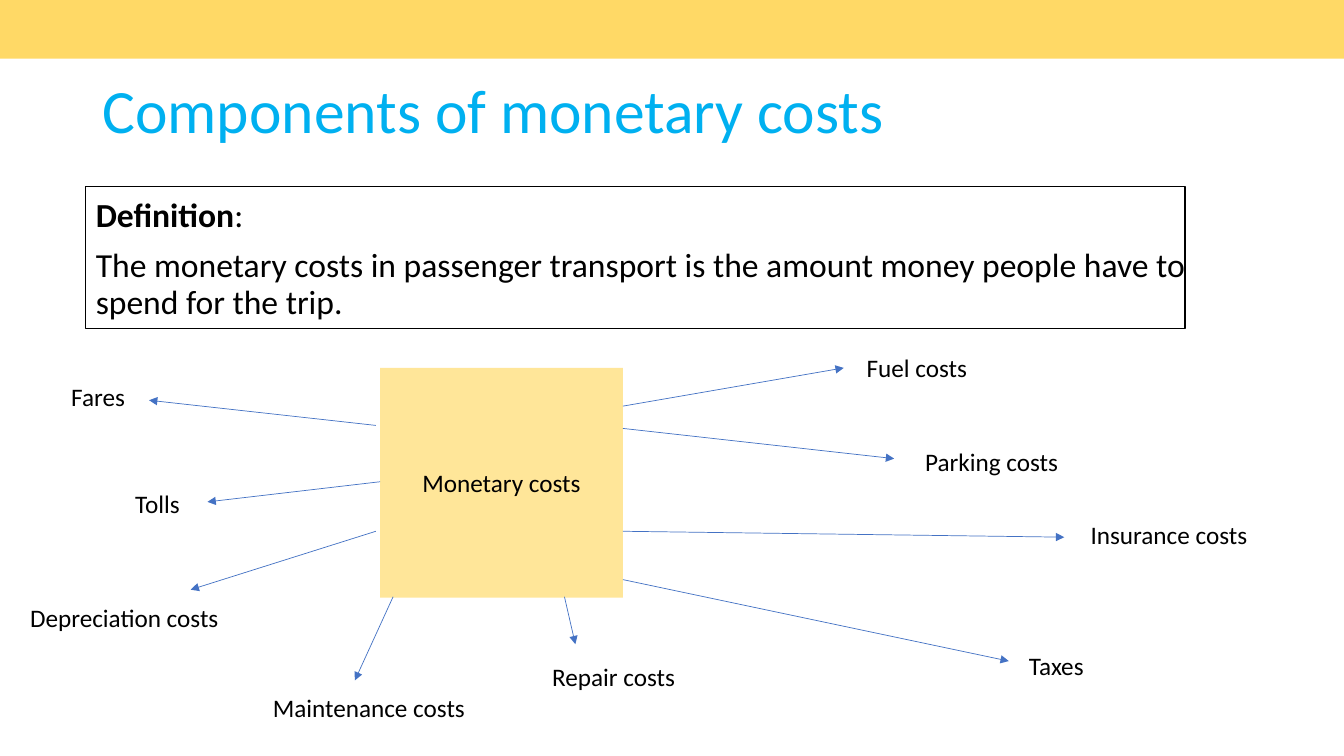
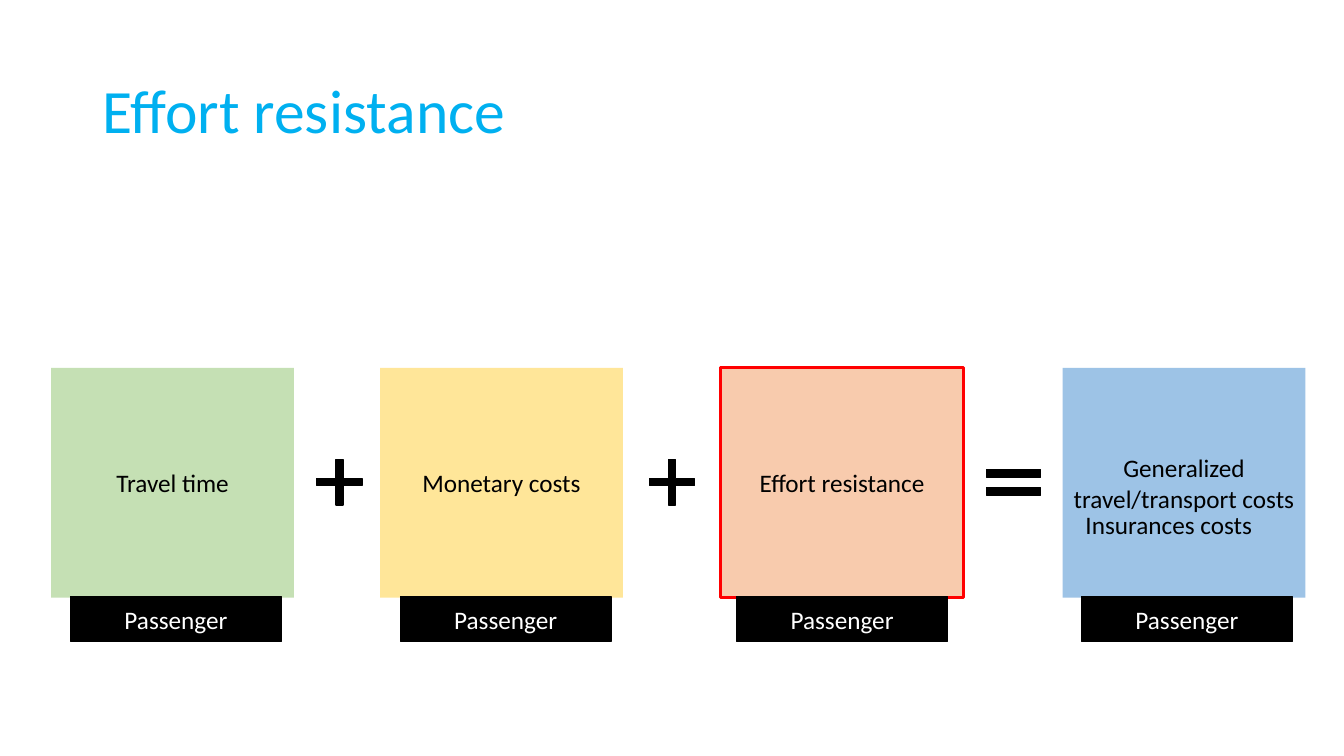
"""Build two slides on the monetary costs and effort resistance of passenger transport."""
import pptx
import pptx.dml.color
import pptx.enum.shapes
import pptx.enum.text
import pptx.oxml
import pptx.oxml.ns
import pptx.util

RGBColor = pptx.dml.color.RGBColor
SHAPES = pptx.enum.shapes.MSO_SHAPE
ALIGN = pptx.enum.text.PP_ALIGN
ANCHOR = pptx.enum.text.MSO_ANCHOR
FIT = pptx.enum.text.MSO_AUTO_SIZE

BLACK = RGBColor(0x00, 0x00, 0x00)
WHITE = RGBColor(0xFF, 0xFF, 0xFF)
TITLE_BLUE = RGBColor(0x00, 0xB0, 0xF0)
ARROW_BLUE = RGBColor(0x44, 0x72, 0xC4)
BAND_YELLOW = RGBColor(0xFF, 0xD9, 0x66)
GREEN = RGBColor(0xC5, 0xE0, 0xB4)
YELLOW = RGBColor(0xFF, 0xE6, 0x99)
ORANGE = RGBColor(0xF8, 0xCB, 0xAD)
BLUE = RGBColor(0x9D, 0xC3, 0xE6)
RED = RGBColor(0xFF, 0x00, 0x00)

FONT = "Calibri"
COLUMNS, ROWS = 32, 18
BOX_TOP, BOX_WIDTH, BOX_HEIGHT = 8.76, 5.78, 5.47
MONETARY_LEFT = 9.05
LABEL_HEIGHT = 0.96

COST_ITEMS = [
    ("Fuel costs", (20.4, 8.28, 2.9), (14.83, 9.67), (20.09, 8.76)),
    ("Parking costs", (21.79, 10.51, 3.67), (14.83, 10.2), (21.29, 10.92)),
    ("Fares", (1.46, 8.95, 1.78), (8.95, 10.13), (3.55, 9.53)),
    ("Tolls", (2.98, 11.5, 1.56), (9.05, 11.47), (4.94, 11.95)),
    ("Depreciation costs", (0.48, 14.23, 5.02), (8.95, 12.65), (4.54, 14.04)),
    ("Maintenance costs", (6.26, 16.37, 5.11), (9.36, 14.21), (8.45, 16.2)),
    ("Insurance costs", (25.73, 12.24, 4.25), (14.83, 12.65), (25.34, 12.79)),
    ("Taxes", (24.26, 15.36, 1.8), (14.83, 13.8), (24.02, 15.74)),
    ("Repair costs", (12.91, 15.62, 3.43), (13.44, 14.21), (13.7, 15.34)),
]

COST_BOXES = [
    ("Travel time", GREEN, 1.22, 1.68),
    ("Monetary costs", YELLOW, MONETARY_LEFT, 9.53),
    ("Effort resistance", ORANGE, 17.16, 17.54),
    ("Generalized travel/transport costs", BLUE, 25.3, 25.75),
]


class Deck:
    """Hold the shared style, the grid and the current slide."""

    def __init__(self):
        self.presentation = pptx.Presentation()
        self.presentation.slide_width = pptx.util.Inches(13.333)
        self.presentation.slide_height = pptx.util.Inches(7.5)
        self.slide = None

    def grid(self, *lengths):
        """Turn alternating columns and rows into slide lengths."""
        units = (self.presentation.slide_width / COLUMNS, self.presentation.slide_height / ROWS)
        return [round(length * units[index % 2]) for index, length in enumerate(lengths)]

    def place(self, shape, *area):
        """Move a placeholder to an area of the grid."""
        shape.left, shape.top, shape.width, shape.height = self.grid(*area)

    def format_text(self, frame, size=18, color=BLACK, align=ALIGN.LEFT):
        """Give every run of a text frame the shared font."""
        for paragraph in frame.paragraphs:
            paragraph.alignment = align
            for run in paragraph.runs:
                run.font.name = FONT
                run.font.size = pptx.util.Pt(size)
                run.font.color.rgb = color

    def add_slide(self, title):
        """Start a slide with its title."""
        self.slide = self.presentation.slides.add_slide(self.presentation.slide_layouts[1])
        shape = self.slide.shapes.title
        self.place(shape, 2.2, 0.96, 27.6, 3.48)
        frame = shape.text_frame
        frame.text = title
        frame.auto_size = FIT.NONE
        frame.vertical_anchor = ANCHOR.MIDDLE
        frame.paragraphs[0].line_spacing = 0.9
        self.format_text(frame, 44, TITLE_BLUE)

    def drop_body(self):
        """Remove the unused body placeholder."""
        element = self.slide.placeholders[1].element
        element.getparent().remove(element)

    def definition(self, term, meaning):
        """Fill the body with a bold term and its meaning."""
        body = self.slide.placeholders[1]
        self.place(body, 2.04, 4.61, 27.6, 11.42)
        frame = body.text_frame
        frame.auto_size = FIT.NONE
        first = frame.paragraphs[0]
        first.add_run().text = term
        first.add_run().text = ":"
        first.runs[0].font.bold = True
        frame.add_paragraph().text = meaning
        self.format_text(frame, 24)
        for paragraph in frame.paragraphs:
            paragraph.line_spacing = 0.9
            paragraph.space_before = pptx.util.Pt(10)
            properties = paragraph._p.get_or_add_pPr()
            properties.set("marL", "0")
            properties.set("indent", "0")
            properties.append(pptx.oxml.parse_xml(f"<a:buNone {pptx.oxml.ns.nsdecls('a')}/>"))

    def shape(self, area, fill=None, line=None, width=1, kind=SHAPES.RECTANGLE, adjust=()):
        """Draw a flat preset shape."""
        shape = self.slide.shapes.add_shape(kind, *self.grid(*area))
        shape.shadow.inherit = False
        for index, value in enumerate(adjust):
            shape.adjustments[index] = value
        if fill is None:
            shape.fill.background()
        else:
            shape.fill.solid()
            shape.fill.fore_color.rgb = fill
        if line is None:
            shape.line.fill.background()
        else:
            shape.line.color.rgb = line
            shape.line.width = pptx.util.Pt(width)
        return shape

    def box(self, text, area, fill, line=None, color=BLACK):
        """Draw a rectangle with centred text."""
        frame = self.shape(area, fill, line).text_frame
        frame.text = text
        frame.word_wrap = True
        frame.vertical_anchor = ANCHOR.MIDDLE
        self.format_text(frame, color=color, align=ALIGN.CENTER)

    def cost_box(self, text, left, fill):
        """Draw one of the large cost boxes."""
        self.box(text, (left, BOX_TOP, BOX_WIDTH, BOX_HEIGHT), fill)

    def label(self, text, left, top, width, wrap=False):
        """Write a one-line label."""
        box = self.slide.shapes.add_textbox(*self.grid(left, top, width, LABEL_HEIGHT))
        frame = box.text_frame
        frame.text = text
        frame.word_wrap = wrap
        frame.auto_size = FIT.SHAPE_TO_FIT_TEXT
        self.format_text(frame)

    def arrow(self, start, end):
        """Draw a thin arrow between two grid points."""
        straight = pptx.enum.shapes.MSO_CONNECTOR.STRAIGHT
        connector = self.slide.shapes.add_connector(straight, *self.grid(*start, *end))
        connector.line.color.rgb = ARROW_BLUE
        connector.line.width = pptx.util.Pt(0.5)
        namespace = pptx.oxml.ns.nsdecls("a")
        head = pptx.oxml.parse_xml(f'<a:tailEnd {namespace} type="triangle"/>')
        connector.line._get_or_add_ln().append(head)
        connector._element.spPr.append(pptx.oxml.parse_xml(f"<a:effectLst {namespace}/>"))


def monetary_slide(deck):
    """Show what monetary costs consist of."""
    deck.add_slide("Components of monetary costs")
    deck.definition(
        "Definition",
        "The monetary costs in passenger transport is the amount money "
        "people have to spend for the trip.",
    )
    deck.shape((0, 0, COLUMNS, 1.4), BAND_YELLOW)
    deck.shape((2.04, 4.44, 26.18, 3.38), line=BLACK)
    deck.cost_box("Monetary costs", MONETARY_LEFT, YELLOW)
    for text, position, start, end in COST_ITEMS:
        deck.arrow(start, end)
        deck.label(text, *position)


def effort_slide(deck):
    """Show the sum of generalized costs with effort resistance marked."""
    deck.add_slide("Effort resistance")
    deck.drop_body()
    for text, fill, left, _ in COST_BOXES:
        deck.cost_box(text, left, fill)
    for left in (7.54, 15.46):
        deck.shape((left, 10.94, 1.08, 1.08), BLACK, BLACK, kind=SHAPES.CROSS, adjust=(0.423,))
    deck.shape((23.26, 10.85, 1.75, 1.27), BLACK, BLACK,
               kind=SHAPES.MATH_EQUAL, adjust=(0.149, 0.187))
    deck.shape((COST_BOXES[2][2], BOX_TOP, BOX_WIDTH, BOX_HEIGHT), line=RED, width=2.25)
    deck.label("Insurances costs", 25.61, 12.02, 4.49, wrap=True)
    for *_, left in COST_BOXES:
        deck.box("Passenger", (left, 14.21, 5.02, 1.06), BLACK, BLACK, WHITE)


def main():
    """Build and save the presentation."""
    deck = Deck()
    monetary_slide(deck)
    effort_slide(deck)
    deck.presentation.save("out.pptx")


if __name__ == "__main__":
    main()
